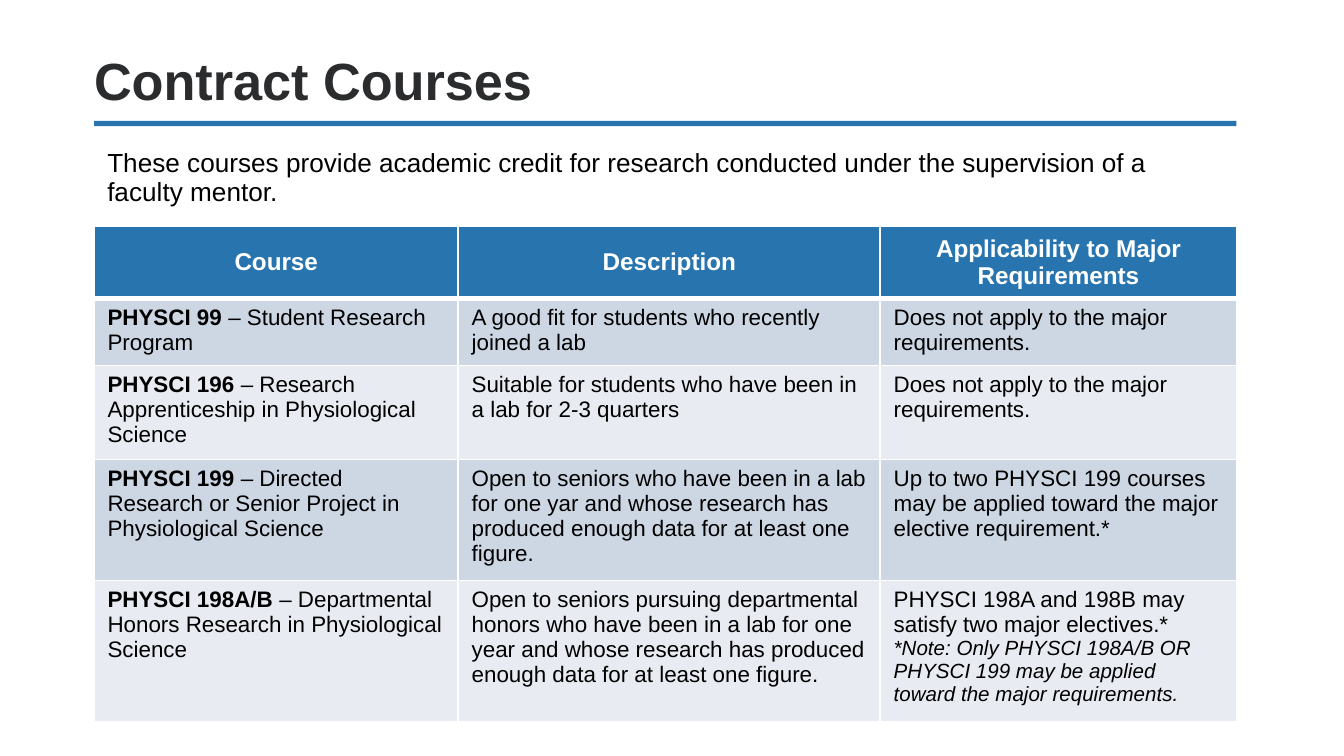
import pptx
import pptx.dml.color
import pptx.enum.shapes
import pptx.enum.text
import pptx.oxml
import pptx.oxml.ns
import pptx.util

Pt = pptx.util.Pt
ANCHOR = pptx.enum.text.MSO_ANCHOR
BLUE, WHITE, BLACK = "2774AE", "FFFFFF", "000000"
LEFT, WIDTH = 50.4, 612


def color(value):
    return pptx.dml.color.RGBColor.from_string(value)


def add_run(paragraph, text, text_color, **formats):
    run = paragraph.add_run()
    run.text = text
    run.font.name = "Arial"
    run.font.color.rgb = color(text_color)
    for name, value in formats.items():
        setattr(run.font, name, value)


presentation = pptx.Presentation()
presentation.slide_width, presentation.slide_height = Pt(720), Pt(405)
slide = presentation.slides.add_slide(presentation.slide_layouts[6])

# Rule under the title
rule = slide.shapes.add_shape(
    pptx.enum.shapes.MSO_SHAPE.RECTANGLE, Pt(LEFT), Pt(64.8), Pt(WIDTH), Pt(2.9))
rule.shadow.inherit = False
rule.fill.solid()
rule.fill.fore_color.rgb = color(BLUE)
rule.line.fill.background()

# Title and introduction
no_margins = dict.fromkeys(
    ["margin_left", "margin_top", "margin_right", "margin_bottom"], 0)
text_boxes = [
    ("Contract Courses", 28.8, 31, "2B2C2E", {"size": Pt(28), "bold": True},
     {"vertical_anchor": ANCHOR.BOTTOM, **no_margins}),
    ("These courses provide academic credit for research conducted under the "
     "supervision of a faculty mentor.", 77, 169, BLACK, {"size": Pt(14)}, {}),
]
for text, top, height, text_color, font_formats, frame_formats in text_boxes:
    box = slide.shapes.add_textbox(Pt(LEFT), Pt(top), Pt(WIDTH), Pt(height))
    box.text_frame.word_wrap = True
    for name, value in frame_formats.items():
        setattr(box.text_frame, name, value)
    paragraph = box.text_frame.paragraphs[0]
    paragraph.line_spacing = 0.9
    add_run(paragraph, text, text_color, **font_formats)

# Course table: code, course name, description, applicability, note
headings = ["Course", "Description", "Applicability to Major Requirements"]
courses = [
    ("PHYSCI 99 ", "– Student Research Program",
     "A good fit for students who recently joined a lab",
     "Does not apply to the major requirements.", ""),
    ("PHYSCI 196 ", "– Research Apprenticeship in Physiological Science",
     "Suitable for students who have been in a lab for 2-3 quarters",
     "Does not apply to the major requirements.", ""),
    ("PHYSCI 199 ", "– Directed Research or Senior Project in Physiological Science",
     "Open to seniors who have been in a lab for one yar and whose research "
     "has produced enough data for at least one figure.",
     "Up to two PHYSCI 199 courses may be applied toward the major elective "
     "requirement.*", ""),
    ("PHYSCI 198A/B ", "– Departmental Honors Research in Physiological Science",
     "Open to seniors pursuing departmental honors who have been in a lab for "
     "one year and whose research has produced enough data for at least one figure.",
     "PHYSCI 198A and 198B may satisfy two major electives.*",
     "*Note: Only PHYSCI 198A/B OR PHYSCI 199 may be applied toward the major "
     "requirements."),
]
table_frame = slide.shapes.add_table(
    len(courses) + 1, len(headings), Pt(LEFT), Pt(121.2), Pt(WIDTH), Pt(265))
table = table_frame.table
for column, width in zip(table.columns, [195.1, 226.1, 190.8]):
    column.width = Pt(width)
for index, row in enumerate(table.rows):
    row.height = Pt(27.4 if index else 36.7)
table_frame.height = Pt(265)

# Header text
for cell, heading in zip(table.rows[0].cells, headings):
    cell.vertical_anchor = ANCHOR.MIDDLE
    paragraph = cell.text_frame.paragraphs[0]
    paragraph.alignment = pptx.enum.text.PP_ALIGN.CENTER
    add_run(paragraph, heading, WHITE, size=Pt(13), bold=True)

# Body text
for index, (code, name, description, applicability, note) in enumerate(courses, 1):
    cells = table.rows[index].cells
    course, details, credit = [cell.text_frame for cell in cells]
    add_run(course.paragraphs[0], code, BLACK, size=Pt(12), bold=True)
    for frame, text in [(course, name), (details, description), (credit, applicability)]:
        add_run(frame.paragraphs[0], text, BLACK, size=Pt(12), bold=False)
    if note:
        add_run(credit.add_paragraph(), note, BLACK, size=Pt(11), bold=False, italic=True)

# Cell borders and fills, with a thicker line below the header
for index, row in enumerate(table.rows):
    for cell in row.cells:
        properties = cell._tc.get_or_add_tcPr()
        for side in ["L", "R", "T", "B"]:
            thick = (index, side) in [(0, "B"), (1, "T")]
            properties.append(pptx.oxml.parse_xml(
                f'<a:ln{side} {pptx.oxml.ns.nsdecls("a")} w="{Pt(3 if thick else 1)}">'
                f'<a:solidFill><a:srgbClr val="{WHITE}"/></a:solidFill></a:ln{side}>'))
        cell.fill.solid()
        cell.fill.fore_color.rgb = color(
            BLUE if index == 0 else "CDD6E3" if index % 2 else "E8EBF2")

presentation.save("out.pptx")
